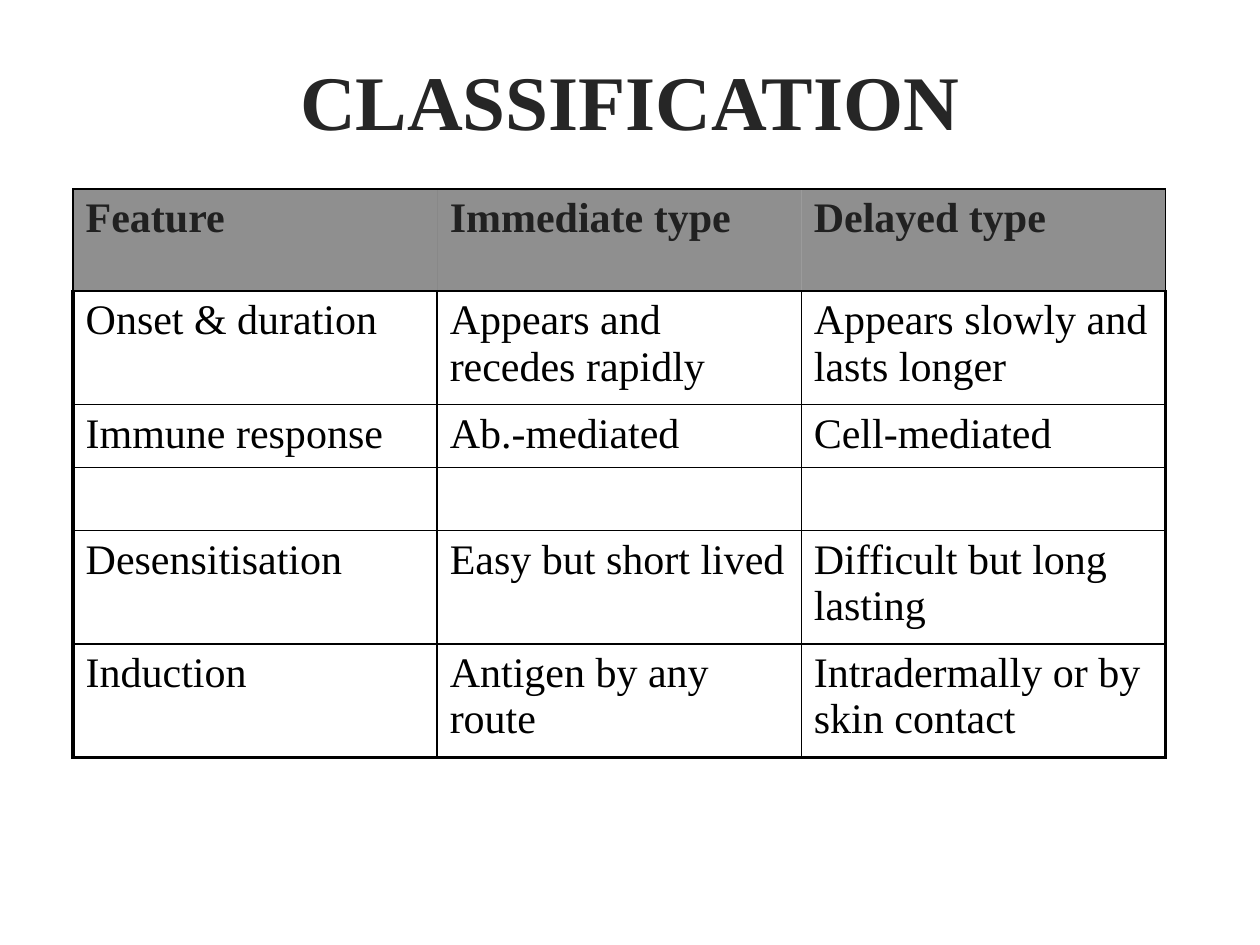
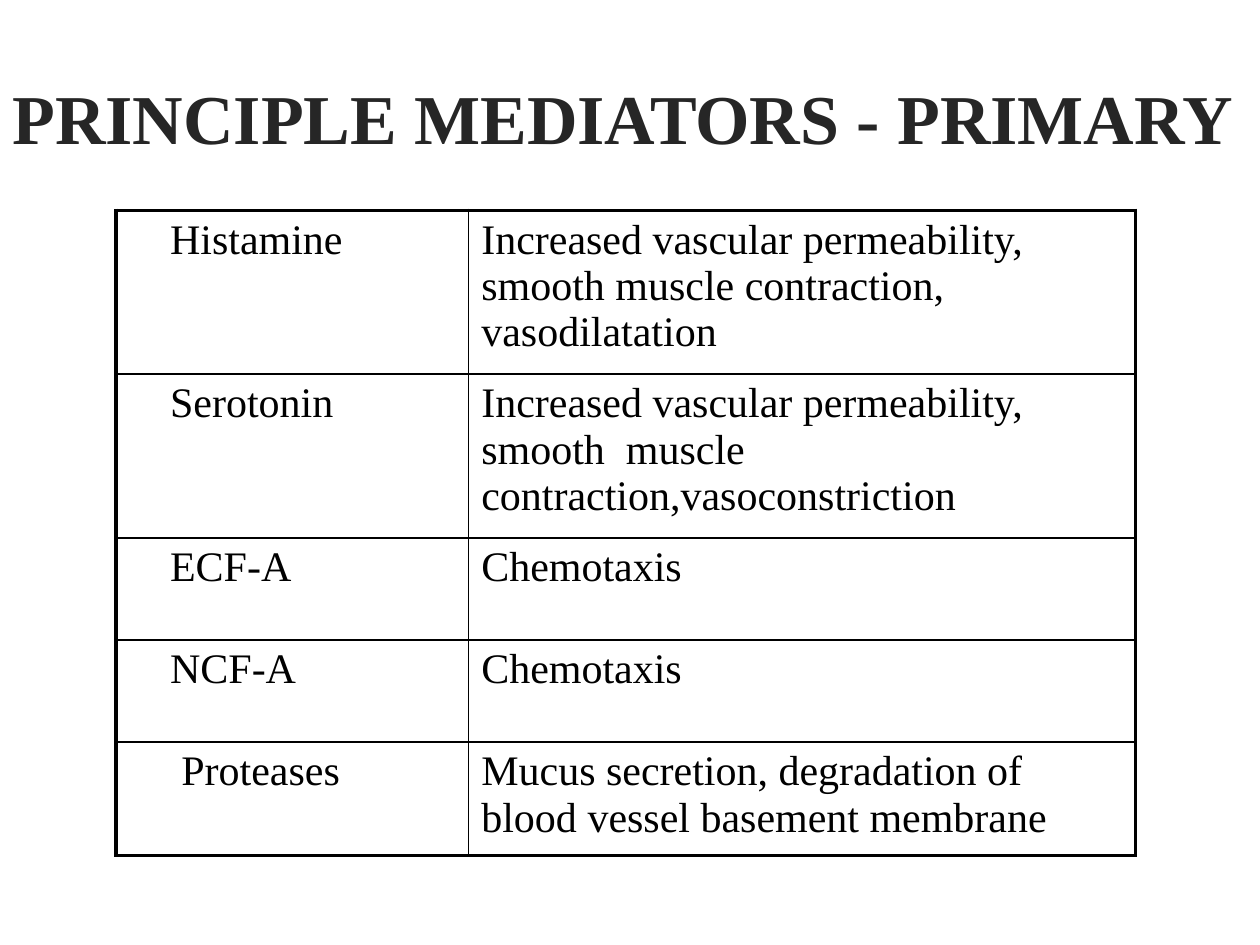
from lxml.etree import SubElement
from pptx import Presentation
from pptx.dml.color import RGBColor
from pptx.enum.text import MSO_ANCHOR as Anchor, MSO_AUTO_SIZE as AutoSize, PP_ALIGN as Align
from pptx.oxml import parse_xml
from pptx.oxml.ns import nsdecls, qn
from pptx.util import Inches, Pt

# Content
CLASSIFICATION = {
    "title": "CLASSIFICATION",
    "title_box": (0.5, 0.42, 9, 1.25),
    "title_size": 44.1,
    "title_align": Align.CENTER,
    "title_frame": {"vertical_anchor": Anchor.TOP, "margin_top": 0},
    "corner": (0.58, 1.5),
    "columns": [2.89] * 3,
    "heights": [0.81, 0.9, 0.5, 0.5, 0.9, 0.9],
    "has_header": True,
    "indents": [0] * 6,
    "rows": [
        ("Feature", "Immediate type", "Delayed type"),
        ("Onset & duration", "Appears and recedes rapidly",
         "Appears slowly and lasts longer"),
        ("Immune response", "Ab.-mediated", "Cell-mediated"),
        ("", "", ""),
        ("Desensitisation", "Easy but short lived", "Difficult but long lasting"),
        ("Induction", "Antigen by any route", "Intradermally or by skin contact"),
    ],
}
MEDIATORS = {
    "title": "PRINCIPLE MEDIATORS - PRIMARY",
    "title_box": (0, 0.3, 10, 1.25),
    "title_size": 40,
    "title_align": Align.LEFT,
    "title_frame": {"vertical_anchor": Anchor.MIDDLE},
    "corner": (0.92, 1.67),
    "columns": [2.8, 5.29],
    "heights": [1.3, 1.3, 0.81, 0.81, 0.9],
    "has_header": False,
    "indents": [0.33] * 4 + [0.42],
    "rows": [
        ("Histamine",
         "Increased vascular permeability, smooth muscle contraction, vasodilatation"),
        ("Serotonin",
         "Increased vascular permeability, smooth  muscle contraction,vasoconstriction"),
        ("ECF-A", "Chemotaxis"),
        ("NCF-A", "Chemotaxis"),
        ("Proteases", "Mucus secretion, degradation of blood vessel basement membrane"),
    ],
}

# Shared style
FONT = "Times New Roman"
TITLE_INK, HEADER_INK, BODY_INK = "262626", "212121", "000000"
BODY_SIZE = 24
THIN, THICK = 1, 2.25
CELL_MARGIN = 0.1


def color(hex_string):
    return RGBColor.from_string(hex_string)


def set_all(target, values):
    for name, value in values.items():
        setattr(target, name, value)


def format_font(font, size, ink, bold):
    set_all(font, {"name": FONT, "size": Pt(size), "bold": bold})
    font.color.rgb = color(ink)


def add_title(slide, content):
    title = slide.shapes.title
    box = map(Inches, content["title_box"])
    set_all(title, dict(zip(("left", "top", "width", "height"), box)))
    frame = title.text_frame
    frame.text = content["title"]
    set_all(frame, {"word_wrap": True, "auto_size": AutoSize.NONE})
    set_all(frame, content["title_frame"])
    heading = frame.paragraphs[0]
    heading.alignment = content["title_align"]
    format_font(heading.font, content["title_size"], TITLE_INK, True)


def set_borders(cell, widths):
    """Draw left, right, top and bottom borders; a width of 0 leaves a side bare."""
    properties = cell._tc.get_or_add_tcPr()
    for position, (side, width) in enumerate(zip("LRTB", widths)):
        paint = (f'<a:solidFill><a:srgbClr val="{BODY_INK}"/></a:solidFill>'
                 if width else "<a:noFill/>")
        properties.insert(position, parse_xml(
            f'<a:ln{side} {nsdecls("a")} w="{Pt(width)}">{paint}</a:ln{side}>'))


def fill_header(cell):
    cell.fill.solid()
    cell.fill.fore_color.rgb = color(HEADER_INK)
    shade = cell._tc.tcPr.find(".//" + qn("a:srgbClr"))
    SubElement(shade, qn("a:alpha")).set("val", "50000")


def border_widths(row, column, last_row, last_column, has_header):
    at_left, at_right = column == 0, column == last_column
    if has_header and row == 0:
        return THIN * at_left, THIN * at_right, THIN, THIN
    at_top, at_bottom = row == 0, row == last_row
    return [THICK if outer else THIN for outer in (at_left, at_right, at_top, at_bottom)]


def add_grid(slide, content):
    rows, columns, heights = content["rows"], content["columns"], content["heights"]
    has_header = content["has_header"]
    extent = (*content["corner"], sum(columns), sum(heights))
    table = slide.shapes.add_table(len(rows), len(columns), *map(Inches, extent)).table
    set_all(table, {"first_row": False, "horz_banding": False})
    for column, width in zip(table.columns, columns):
        column.width = Inches(width)

    for r, (entries, height, indent) in enumerate(zip(rows, heights, content["indents"])):
        table.rows[r].height = Inches(height)
        is_header = has_header and r == 0
        for c, entry in enumerate(entries):
            cell = table.cell(r, c)
            cell.text = entry
            cell.margin_left = Inches(CELL_MARGIN + (indent if c == 0 else 0))
            format_font(cell.text_frame.paragraphs[0].font, BODY_SIZE,
                        HEADER_INK if is_header else BODY_INK, is_header)
            if is_header:
                fill_header(cell)
            else:
                cell.fill.background()
            set_borders(cell, border_widths(r, c, len(rows) - 1, len(columns) - 1, has_header))


def main():
    deck = Presentation()
    set_all(deck, {"slide_width": Inches(10), "slide_height": Inches(7.5)})
    title_only = deck.slide_layouts[5]
    for content in (CLASSIFICATION, MEDIATORS):
        slide = deck.slides.add_slide(title_only)
        add_title(slide, content)
        add_grid(slide, content)
    deck.save("out.pptx")


if __name__ == "__main__":
    main()
